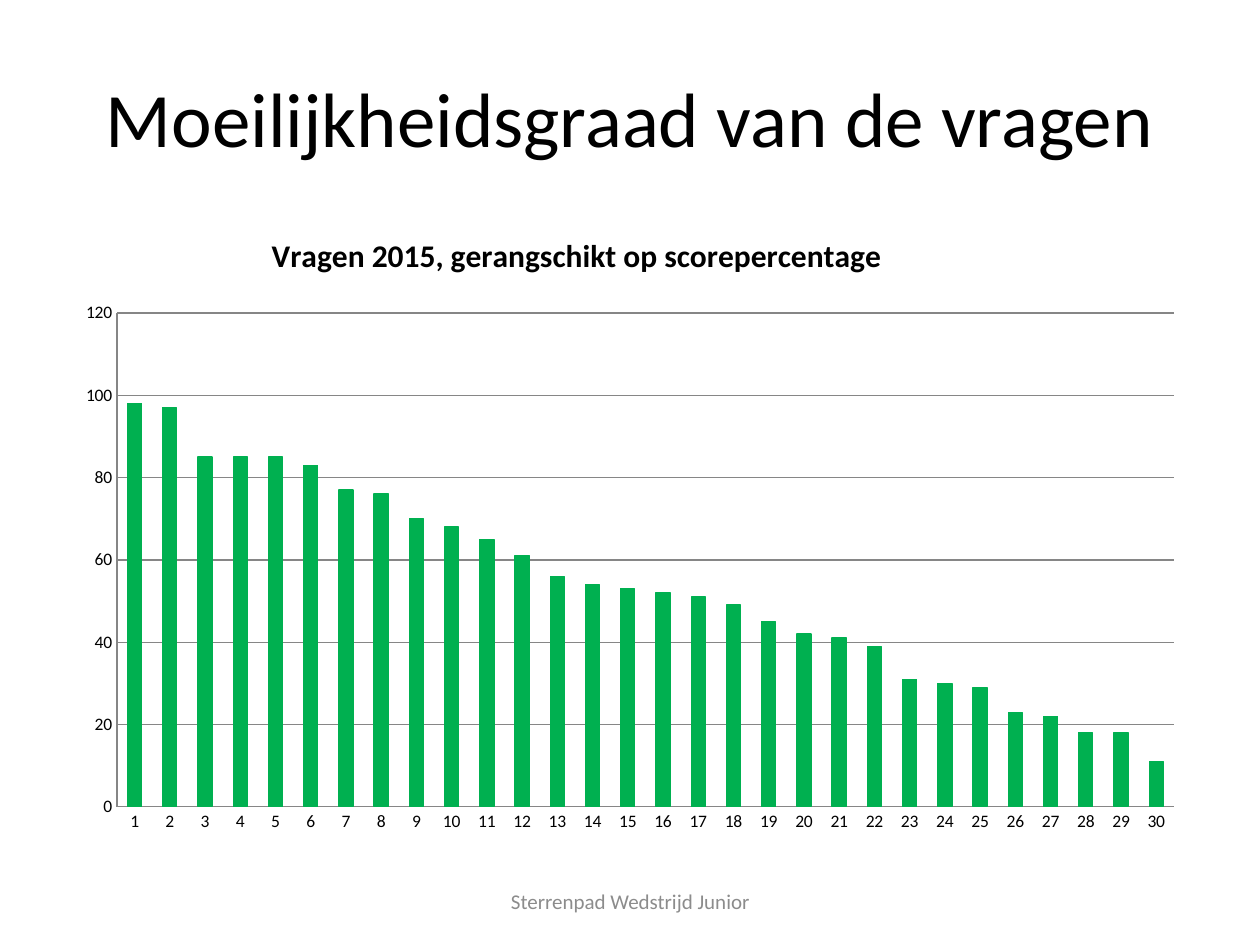
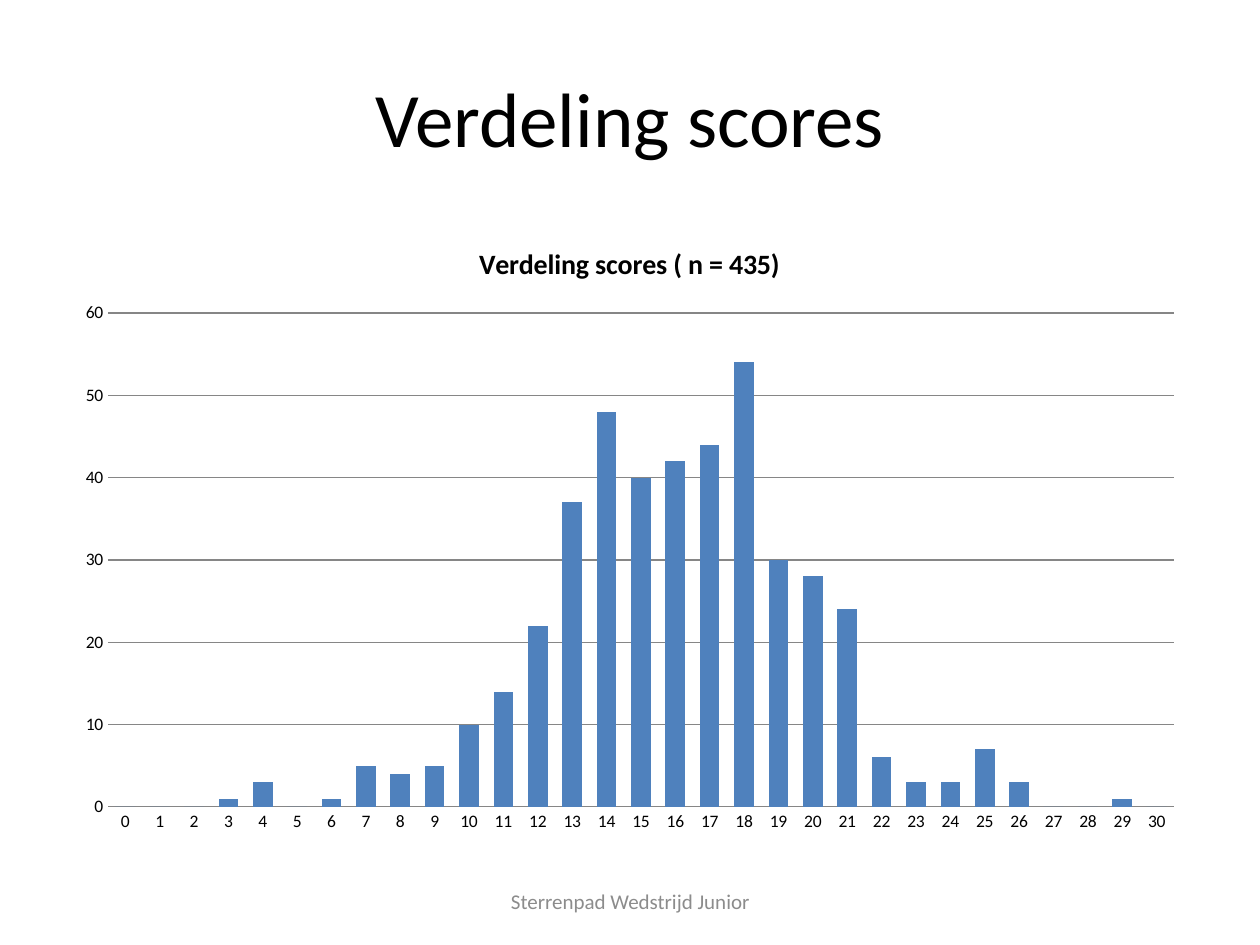
from lxml import etree
from pptx import Presentation
from pptx.chart.data import CategoryChartData
from pptx.dml.color import RGBColor
from pptx.enum.chart import XL_CHART_TYPE, XL_TICK_MARK
from pptx.enum.text import MSO_ANCHOR, PP_ALIGN
from pptx.oxml.ns import qn
from pptx.util import Emu, Pt

COLUMNS = XL_CHART_TYPE.COLUMN_CLUSTERED
NO_TICK = XL_TICK_MARK.NONE
MIDDLE = MSO_ANCHOR.MIDDLE
CENTER = PP_ALIGN.CENTER
EMU_PER_PX = 914400 / 126
FONT = "Calibri"
BLACK, GRAY, GRID = "000000", "8C8C8C", "868686"
TITLE_BOX = (63, 38, 1134, 158)
CHART_BOX = (63, 220, 1134, 624)
FOOTER_BOX = (431, 876, 399, 50)
FOOTER = "Sterrenpad Wedstrijd Junior"

CHARTS = [
    {
        "title": "Moeilijkheidsgraad van de vragen",
        "heading": "Vragen 2015, gerangschikt op scorepercentage",
        "heading_size": 18,
        "heading_at": (266, 228),
        "plot_box": (117, 313, 1057, 494),
        "first": 1,
        "values": [98, 97, 85, 85, 85, 83, 77, 76, 70, 68, 65, 61, 56, 54, 53,
                   52, 51, 49, 45, 42, 41, 39, 31, 30, 29, 23, 22, 18, 18, 11],
        "color": "00B050",
        "outlined": True,
        "columns": {"gap_width": 150, "overlap": 0},
        "scale": {"minimum_scale": 0, "maximum_scale": 120, "major_unit": 20},
    },
    {
        "title": "Verdeling scores",
        "heading": "Verdeling scores ( n = 435)",
        "heading_size": 16,
        "heading_at": (474, 240),
        "plot_box": (108, 313, 1066, 494),
        "first": 0,
        "values": [0, 0, 0, 1, 3, 0, 1, 5, 4, 5, 10, 14, 22, 37, 48, 40,
                   42, 44, 54, 30, 28, 24, 6, 3, 3, 7, 3, 0, 0, 1, 0],
        "color": "4F81BD",
        "outlined": False,
        "columns": {"gap_width": 75, "overlap": -25},
        "scale": {"minimum_scale": 0, "maximum_scale": 60, "major_unit": 10},
    },
]


def rgb(color):
    return RGBColor.from_string(color)


def place(parent, index, box, inner=False):
    for old in parent.findall(qn("c:layout")):
        parent.remove(old)
    layout = etree.Element(qn("c:layout"))
    manual = etree.SubElement(layout, qn("c:manualLayout"))
    left, top, width, height = CHART_BOX
    settings = [("layoutTarget", "inner")] if inner else []
    settings += [("xMode", "edge"), ("yMode", "edge")]
    offsets = (left, top, 0, 0)
    sizes = (width, height, width, height)
    for name, value, offset, size in zip("xywh", box, offsets, sizes):
        settings.append((name, f"{(value - offset) / size:.4f}"))
    for name, value in settings:
        etree.SubElement(manual, qn("c:" + name)).set("val", value)
    parent.insert(index, layout)


deck = Presentation()
deck.slide_width = Emu(9144000)
deck.slide_height = Emu(6858000)
title_box, chart_box, footer_box = [
    [Emu(round(length * EMU_PER_PX)) for length in box]
    for box in (TITLE_BOX, CHART_BOX, FOOTER_BOX)
]

for item in CHARTS:
    page = deck.slides.add_slide(deck.slide_layouts[5])
    title = page.shapes.title
    title.left, title.top, title.width, title.height = title_box

    data = CategoryChartData()
    first = item["first"]
    data.categories = [str(first + i) for i in range(len(item["values"]))]
    data.add_series("Series 1", item["values"])
    chart = page.shapes.add_chart(COLUMNS, *chart_box, data).chart
    chart.has_legend = False
    chart.font.name = FONT
    chart.font.size = Pt(10)
    chart.font.color.rgb = rgb(BLACK)

    chart.has_title = True
    heading = chart.chart_title.text_frame
    heading.text = item["heading"]
    heading_format = {"name": FONT, "size": Pt(item["heading_size"]), "bold": True}
    for name, value in heading_format.items():
        setattr(heading.paragraphs[0].runs[0].font, name, value)
    place(chart.element.find(".//" + qn("c:title")), 1, item["heading_at"])
    place(chart.element.find(".//" + qn("c:plotArea")), 0, item["plot_box"], True)

    plot = chart.plots[0]
    plot.vary_by_categories = False
    for name, value in item["columns"].items():
        setattr(plot, name, value)
    bars = plot.series[0].format
    bars.fill.solid()
    bars.fill.fore_color.rgb = rgb(item["color"])

    values = chart.value_axis
    for name, value in item["scale"].items():
        setattr(values, name, value)
    values.has_major_gridlines = True
    lines = [values.major_gridlines.format.line, chart.category_axis.format.line]
    if item["outlined"]:
        lines.append(values.format.line)
        bars.line.color.rgb = rgb(item["color"])
        bars.line.width = Pt(0.75)
    else:
        values.format.line.fill.background()
    for line in lines:
        line.color.rgb = rgb(GRID)
        line.width = Pt(0.75)
    for axis in (values, chart.category_axis):
        axis.major_tick_mark = NO_TICK
        axis.minor_tick_mark = NO_TICK

    footer = page.shapes.add_textbox(*footer_box)
    texts = [(title, item["title"], 44, BLACK), (footer, FOOTER, 12, GRAY)]
    for box, text, size, color in texts:
        frame = box.text_frame
        frame.word_wrap = True
        frame.vertical_anchor = MIDDLE
        para = frame.paragraphs[0]
        para.alignment = CENTER
        span = para.add_run()
        span.text = text
        for name, value in {"name": FONT, "size": Pt(size)}.items():
            setattr(span.font, name, value)
        span.font.color.rgb = rgb(color)

deck.save("out.pptx")
